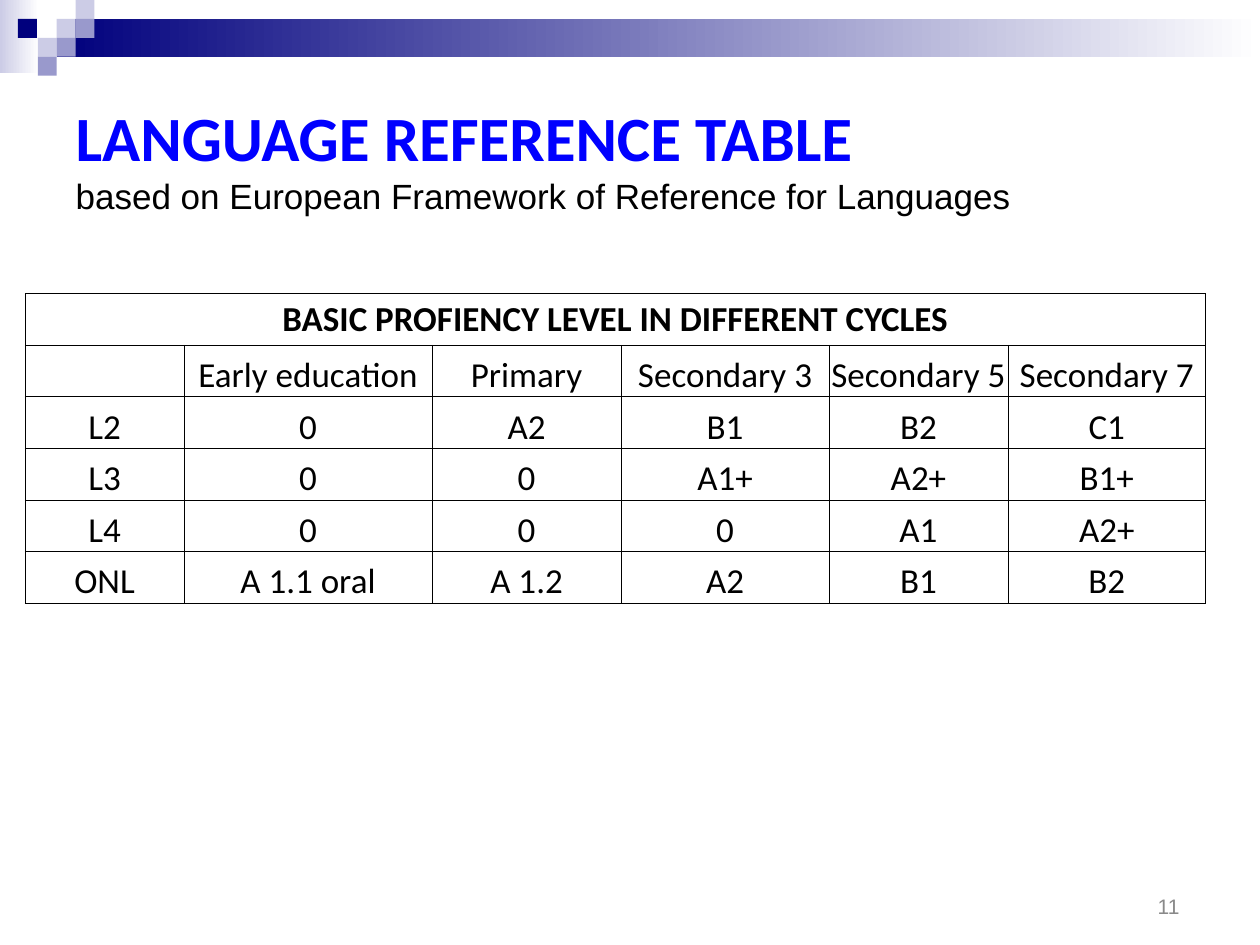
from itertools import product

from lxml.etree import SubElement
from pptx import Presentation
from pptx.dml.color import RGBColor
from pptx.enum.shapes import MSO_SHAPE as Shape
from pptx.enum.text import MSO_ANCHOR as Anchor, PP_ALIGN as Align
from pptx.oxml.ns import qn
from pptx.util import Inches, Pt

THEME = {
    "navy": "00007D", "violet": "9999CC", "lilac": "CCCCE6", "white": "FFFFFF",
    "blue": "0000FF", "black": "000000", "gray": "898989",
    "heading": "Calibri", "body": "Arial",
    "title_size": 36, "text_size": 20, "number_size": 12, "rule": 0.5,
}

TITLE = "LANGUAGE REFERENCE TABLE"
SUBTITLE = "based on European Framework of Reference for Languages"
PAGE_NUMBER = "11"
CAPTION = "BASIC PROFIENCY LEVEL IN DIFFERENT CYCLES"
LEVELS = [
    ["", "Early education", "Primary", "Secondary 3", "Secondary 5", "Secondary 7"],
    ["L2", "0", "A2", "B1", "B2", "C1"],
    ["L3", "0", "0", "A1+", "A2+", "B1+"],
    ["L4", "0", "0", "0", "A1", "A2+"],
    ["ONL", "A 1.1 oral", "A 1.2", "A2", "B1", "B2"],
]
COLUMN_WIDTHS = [1.26, 1.97, 1.5, 1.65, 1.42, 1.57]
ROW_HEIGHT = 0.41

BANDS = [
    (0, 0, 0.31, 0.58, "lilac"),
    (0.45, 0.15, 9.55, 0.3, "navy"),
]
TILE = 0.15
TILES = [
    (3, 1, "lilac"), (4, 0, "lilac"), (4, 1, "violet"), (2, 2, "lilac"),
    (0.95, 1, "navy"), (3, 2, "violet"), (2, 3, "violet"),
]


def color(name):
    return RGBColor.from_string(THEME[name])


def write(paragraph, text, font="heading", size="text_size", ink="black",
          bold=False, align=Align.LEFT):
    paragraph.alignment = align
    if text:
        run = paragraph.add_run()
        run.text = text
        run.font.name = THEME[font]
        run.font.size = Pt(THEME[size])
        run.font.bold = bold
        run.font.color.rgb = color(ink)


def add_block(slide, left, top, width, height, tint, fade=False):
    block = slide.shapes.add_shape(
        Shape.RECTANGLE, Inches(left), Inches(top), Inches(width), Inches(height))
    block.shadow.inherit = False
    block.line.fill.background()
    if fade:
        block.fill.gradient()
        block.fill.gradient_angle = 0
        for stop, name in zip(block.fill.gradient_stops, (tint, "white")):
            stop.color.rgb = color(name)
    else:
        block.fill.solid()
        block.fill.fore_color.rgb = color(tint)


def add_heading(slide):
    title = slide.shapes.title
    title.left, title.top = Inches(0.5), Inches(0.5)
    title.width, title.height = Inches(9), Inches(1.5)
    title.text_frame.vertical_anchor = Anchor.MIDDLE
    heading = title.text_frame.paragraphs[0]
    write(heading, TITLE, size="title_size", ink="blue", bold=True)
    heading.add_line_break()
    write(heading, SUBTITLE, font="body")


def add_page_number(slide):
    number = slide.shapes.add_textbox(
        Inches(9.09), Inches(6.82), Inches(2.33), Inches(0.52)).text_frame
    number.word_wrap = True
    number.vertical_anchor = Anchor.BOTTOM
    write(number.paragraphs[0], PAGE_NUMBER, font="body", size="number_size", ink="gray")


def format_cell(cell, anchor):
    cell.vertical_anchor = anchor
    cell.margin_left = cell.margin_right = cell.margin_top = Inches(0.01)
    cell.margin_bottom = 0
    properties = cell._tc.get_or_add_tcPr()
    for side in ("a:lnL", "a:lnR", "a:lnT", "a:lnB"):
        border = SubElement(properties, qn(side), w=str(Pt(THEME["rule"])))
        SubElement(SubElement(border, qn("a:solidFill")), qn("a:srgbClr"), val=THEME["black"])
    cell.fill.background()


def add_levels_table(slide):
    row_count, column_count = len(LEVELS) + 1, len(COLUMN_WIDTHS)
    levels = slide.shapes.add_table(
        row_count, column_count, Inches(0.2), Inches(2.33),
        Inches(sum(COLUMN_WIDTHS)), Inches(ROW_HEIGHT * row_count)).table
    levels.first_row = levels.horz_banding = False
    for column, width in zip(levels.columns, COLUMN_WIDTHS):
        column.width = Inches(width)
    for row in levels.rows:
        row.height = Inches(ROW_HEIGHT)

    for r, c in product(range(row_count), range(column_count)):
        cell = levels.cell(r, c)
        format_cell(cell, Anchor.BOTTOM if r else Anchor.MIDDLE)
        if r:
            write(cell.text_frame.paragraphs[0], LEVELS[r - 1][c], align=Align.CENTER)
    caption = levels.cell(0, 0)
    caption.merge(levels.cell(0, column_count - 1))
    write(caption.text_frame.paragraphs[0], CAPTION, bold=True, align=Align.CENTER)


def main():
    deck = Presentation()
    deck.slide_width, deck.slide_height = Inches(10), Inches(7.5)
    slide = deck.slides.add_slide(deck.slide_layouts[5])
    for band in BANDS:
        add_block(slide, *band, fade=True)
    for column, row, tint in TILES:
        add_block(slide, column * TILE, row * TILE, TILE, TILE, tint)
    add_heading(slide)
    add_page_number(slide)
    add_levels_table(slide)
    deck.save("out.pptx")


if __name__ == "__main__":
    main()
